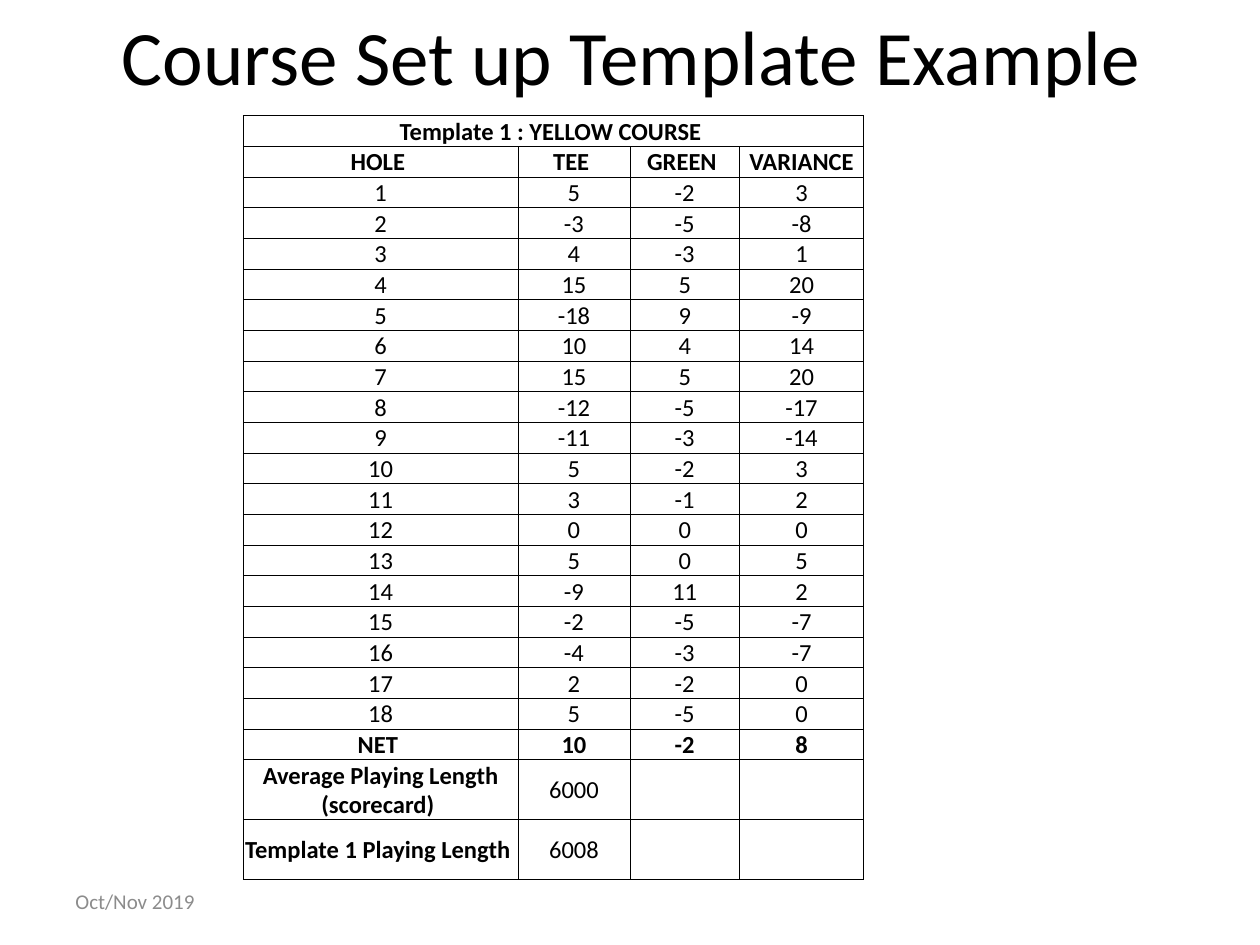
from lxml import etree
from pptx import Presentation
from pptx.dml.color import RGBColor
from pptx.enum.text import MSO_ANCHOR, PP_ALIGN
from pptx.oxml.ns import qn
from pptx.util import Pt

BLACK = RGBColor(0x00, 0x00, 0x00)
WHITE = RGBColor(0xFF, 0xFF, 0xFF)
GREY = RGBColor(0x8C, 0x8C, 0x8C)
FONT = "Calibri"
LEFT, CENTER = PP_ALIGN.LEFT, PP_ALIGN.CENTER
MIDDLE, BOTTOM = MSO_ANCHOR.MIDDLE, MSO_ANCHOR.BOTTOM

TITLE_BOX = (36.7, -13.7, 648, 90)
DATE_BOX = (36, 500.4, 168, 28.8)
TABLE_BOX = (139, 66.2, 354.5, 428.4)

COLUMN_WIDTHS = (157, 64, 62.6, 70.9)
ROW_HEIGHT = 16.8
LENGTH_ROW_HEIGHT = 34

TEES = (5, -3, 4, 15, -18, 10, 15, -12, -11, 5, 3, 0, 5, -9, -2, -4, 2, 5)
GREENS = (-2, -5, -3, 5, 9, 4, 5, -5, -3, -2, -1, 0, 0, 11, -5, -3, -2, -5)


def style_text(text_frame, size, color, alignment, bold=False):
    for paragraph in text_frame.paragraphs:
        paragraph.alignment = alignment
        for run in paragraph.runs:
            run.font.name = FONT
            run.font.size = Pt(size)
            run.font.bold = bold
            run.font.color.rgb = color


def add_title(slide, box):
    title = slide.shapes.title
    title.left, title.top, title.width, title.height = map(Pt, box)
    title.text_frame.text = "Course Set up Template Example"
    title.text_frame.vertical_anchor = MIDDLE
    style_text(title.text_frame, 44, BLACK, CENTER)


def add_date(slide, box):
    text_frame = slide.shapes.add_textbox(*map(Pt, box)).text_frame
    text_frame.word_wrap = True
    text_frame.vertical_anchor = MIDDLE
    text_frame.text = "Oct/Nov 2019"
    style_text(text_frame, 12, GREY, LEFT)


def add_borders(cell):
    properties = cell._tc.get_or_add_tcPr()
    for side in ("a:lnL", "a:lnR", "a:lnT", "a:lnB"):
        line = etree.SubElement(properties, qn(side), w=str(Pt(0.5)))
        fill = etree.SubElement(line, qn("a:solidFill"))
        etree.SubElement(fill, qn("a:srgbClr"), val=str(BLACK))


def format_cell(cell, bold, anchor):
    add_borders(cell)
    cell.fill.solid()
    cell.fill.fore_color.rgb = WHITE
    cell.margin_left = cell.margin_right = cell.margin_top = Pt(0.7)
    cell.margin_bottom = 0
    cell.vertical_anchor = anchor
    style_text(cell.text_frame, 14, BLACK, CENTER, bold)


def course_rows():
    """Return the table's rows; variance is tee plus green, net the column sum."""
    holes = [(hole, tee, green, tee + green)
             for hole, (tee, green) in enumerate(zip(TEES, GREENS), start=1)]
    net_tee, net_green = sum(TEES), sum(GREENS)
    return [
        ("Template 1 : YELLOW COURSE ", "", "", ""),
        ("HOLE ", "TEE ", "GREEN ", "VARIANCE"),
        *holes,
        ("NET ", net_tee, net_green, net_tee + net_green),
        ("Average Playing Length (scorecard) ", 6000, "", ""),
        ("Template 1 Playing Length ", 6008, "", ""),
    ]


def add_course_table(slide, box):
    rows = course_rows()
    table = slide.shapes.add_table(
        len(rows), len(COLUMN_WIDTHS), *map(Pt, box)).table
    table.first_row = table.horz_banding = False
    for column, width in zip(table.columns, COLUMN_WIDTHS):
        column.width = Pt(width)

    net_row = len(rows) - 3
    for r, values in enumerate(rows):
        is_length_row = r > net_row
        table.rows[r].height = Pt(LENGTH_ROW_HEIGHT if is_length_row else ROW_HEIGHT)
        for c, value in enumerate(values):
            cell = table.cell(r, c)
            cell.text_frame.text = str(value)
            bold = r < 2 or r == net_row or (is_length_row and c == 0)
            centred = r == 0 or is_length_row or (c == 3 and r != net_row)
            format_cell(cell, bold, MIDDLE if centred else BOTTOM)
    table.cell(0, 0).merge(table.cell(0, len(COLUMN_WIDTHS) - 1))


def main():
    presentation = Presentation()
    presentation.slide_width, presentation.slide_height = Pt(720), Pt(540)
    slide = presentation.slides.add_slide(presentation.slide_layouts[5])
    add_title(slide, TITLE_BOX)
    add_date(slide, DATE_BOX)
    add_course_table(slide, TABLE_BOX)
    presentation.save("out.pptx")


if __name__ == "__main__":
    main()
